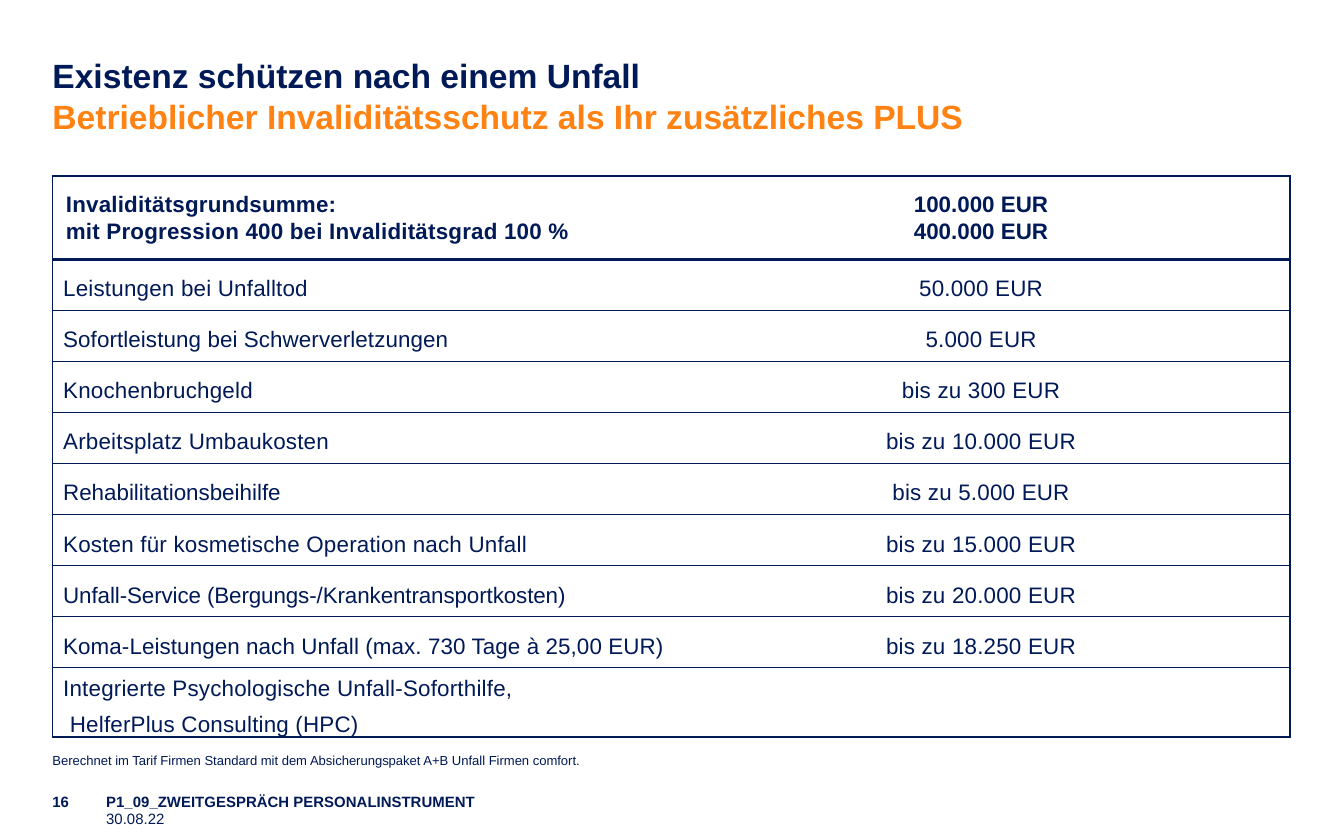
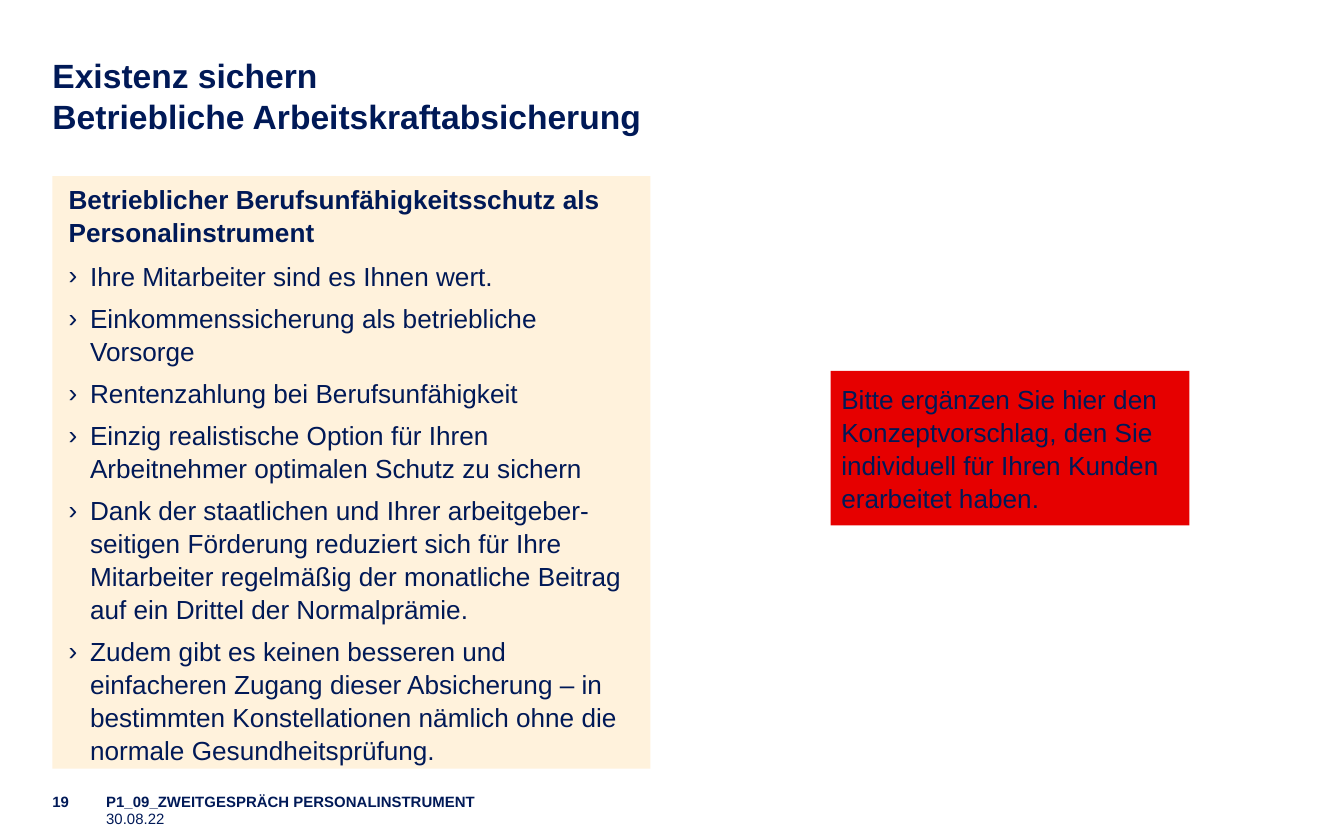
from lxml import etree
from pptx import Presentation
from pptx.dml.color import RGBColor
from pptx.enum.shapes import MSO_SHAPE
from pptx.enum.text import MSO_ANCHOR, MSO_AUTO_SIZE, PP_ALIGN
from pptx.oxml.ns import qn
from pptx.util import Pt

PX = 9144  # 100 px to the inch
RECT = MSO_SHAPE.RECTANGLE
TOP, MIDDLE = MSO_ANCHOR.TOP, MSO_ANCHOR.MIDDLE
FIXED = MSO_AUTO_SIZE.NONE
LEFT, CENTER = PP_ALIGN.LEFT, PP_ALIGN.CENTER
NAVY, ORANGE, CREAM, RED, WHITE = "001957", "FF8213", "FFF2DC", "E60000", "FFFFFF"
FONT = "Arial"
hue = RGBColor.from_string


def write(frame, text, size=12, bold=False, color=NAVY, align=LEFT, line=1.0,
          before=0, after=0, left=0, hang=0, bullet=None, level=0, track=0, wrap=False):
    """Add a paragraph, or with wrap a new line in the last paragraph."""
    para = frame.paragraphs[-1]
    if wrap:
        para.add_line_break()
    elif para.runs:
        para = frame.add_paragraph()
    props = para._p.get_or_add_pPr()
    props.set("marL", str(left * PX))
    props.set("indent", str(-hang * PX))
    if bullet and not wrap:
        tint = etree.SubElement(props, qn("a:buClr"))
        etree.SubElement(tint, qn("a:srgbClr"), val=color)
        etree.SubElement(props, qn("a:buFont"), typeface=FONT)
        etree.SubElement(props, qn("a:buChar"), char=bullet)
    elif not wrap:
        etree.SubElement(props, qn("a:buNone"))
    para.level, para.alignment, para.line_spacing = level, align, line
    para.space_before, para.space_after = Pt(before), Pt(after)
    run = para.add_run()
    run.text = text
    run.font.name, run.font.size, run.font.bold = FONT, Pt(size), bold
    run.font.color.rgb = hue(color)
    if track:
        run._r.get_or_add_rPr().set("spc", str(round(track * 100)))


def place(shape, x, y, w, h, inset=(0, 0, 0, 0), anchor=TOP):
    """Set bounds and text frame (insets: left, top, right, bottom)."""
    shape.left, shape.top, shape.width, shape.height = [n * PX for n in (x, y, w, h)]
    frame = shape.text_frame
    frame.word_wrap, frame.auto_size, frame.vertical_anchor = True, FIXED, anchor
    (frame.margin_left, frame.margin_top,
     frame.margin_right, frame.margin_bottom) = [n * PX for n in inset]
    return frame


deck = Presentation()
deck.slide_width, deck.slide_height = 1000 * PX, 625 * PX

# Titles and footers
heads = [
    (5, "16", [("Existenz schützen nach einem Unfall", NAVY),
               ("Betrieblicher Invaliditätsschutz als Ihr zusätzliches PLUS", ORANGE)]),
    (1, "19", [("Existenz sichern", NAVY),
               ("Betriebliche Arbeitskraftabsicherung", NAVY)]),
]
for layout, number, lines in heads:
    slide = deck.slides.add_slide(deck.slide_layouts[layout])
    frame = place(slide.shapes.title, 39, 41, 921, 59)
    for i, (text, color) in enumerate(lines):
        write(frame, text, size=18, bold=True, color=color, wrap=i > 0)
    for x, y, w, text, bold in [
        (79, 605, 461, "30.08.22", False),
        (79, 592, 461, "P1_09_ZWEITGESPRÄCH PERSONALINSTRUMENT", True),
        (39, 592, 39, number, True),
    ]:
        foot = slide.shapes.add_textbox(0, 0, PX, PX)
        frame = place(foot, x, y, w, 8, anchor=MIDDLE)
        write(frame, text, size=8, bold=bold, line=1.05)
first, second = deck.slides

# Benefits table
rows = [
    ("Leistungen bei Unfalltod", 0.1, "50.000 EUR"),
    ("Sofortleistung bei Schwerverletzungen", 0.05, "5.000 EUR"),
    ("Knochenbruchgeld", 0.1, "bis zu 300 EUR"),
    ("Arbeitsplatz Umbaukosten", 0.1, "bis zu 10.000 EUR"),
    ("Rehabilitationsbeihilfe", 0, "bis zu 5.000 EUR"),
    ("Kosten für kosmetische Operation nach Unfall", 0.1, "bis zu 15.000 EUR"),
    ("Unfall-Service (Bergungs-/Krankentransportkosten)", -0.05, "bis zu 20.000 EUR"),
    ("Koma-Leistungen nach Unfall (max. 730 Tage à 25,00 EUR)", 0.05, "bis zu 18.250 EUR"),
]
last = len(rows) + 1
table = first.shapes.add_table(last + 1, 2, 39 * PX, 131 * PX, 921 * PX, 403 * PX).table
table.first_row = table.horz_banding = False
table.columns[0].width, table.columns[1].width = 461 * PX, 460 * PX
for r in range(last + 1):
    table.rows[r].height = {0: 62, last: 37}.get(r, 38) * PX
    for c in range(2):
        cell = table.cell(r, c)
        cell.fill.solid()
        cell.fill.fore_color.rgb = hue(WHITE)
        cell.vertical_anchor = MIDDLE
        cell.margin_left = cell.margin_right = cell.margin_bottom = 0
        cell.margin_top = (6 if r else 3) * PX
        edges = {
            "lnL": 0 if c else 1,
            "lnR": 1 if c or r == last else 0,
            "lnT": 1.5 if r == 1 else 0.5 if r else 1,
            "lnB": {0: 1.5, last: 1}.get(r, 0.5),
        }
        props = cell._tc.get_or_add_tcPr()
        for i, (edge, width) in enumerate(edges.items()):
            rule = etree.Element(qn("a:" + edge), w=str(Pt(width)))
            if width:
                fill = etree.SubElement(rule, qn("a:solidFill"))
                etree.SubElement(fill, qn("a:srgbClr"), val=NAVY)
            else:
                etree.SubElement(rule, qn("a:noFill"))
            props.insert(i, rule)
table.cell(last, 0).merge(table.cell(last, 1))

label, value = table.cell(0, 0).text_frame, table.cell(0, 1).text_frame
tight = Pt(11.9)
write(label, "Invaliditätsgrundsumme:", bold=True, line=tight, left=10, track=0.1)
write(label, "mit Progression 400 bei Invaliditätsgrad 100 %", bold=True, line=tight,
      before=2.6, left=10, track=0.1)
write(value, "100.000 EUR", bold=True, align=CENTER, line=tight)
write(value, "400.000 EUR", bold=True, align=CENTER, before=0.8)
for r, (text, track, amount) in enumerate(rows, 1):
    write(table.cell(r, 0).text_frame, text, left=8, track=track)
    write(table.cell(r, 1).text_frame, amount, align=CENTER, track=0.1)
label = table.cell(last, 0).text_frame
write(label, "Integrierte Psychologische Unfall-Soforthilfe,", left=8, track=0.1)
write(label, "HelferPlus Consulting (HPC)", left=13, before=5.8, track=0.1)

note = first.shapes.add_textbox(0, 0, PX, PX)
frame = place(note, 39, 560, 911, 17, inset=(0, 0, 0, 5), anchor=MIDDLE)
write(frame, "Berechnet im Tarif Firmen Standard mit dem Absicherungspaket "
      "A+B Unfall Firmen comfort.", size=7)

# Arguments list
body = second.placeholders[1]
body.fill.solid()
body.fill.fore_color.rgb = hue(CREAM)
frame = place(body, 39, 131, 445, 441, inset=(12, 4, 8, 0))
write(frame, "Betrieblicher Berufsunfähigkeitsschutz als Personalinstrument",
      size=14, bold=True, line=1.05, after=6)
points = [
    (0, "Ihre Mitarbeiter sind es Ihnen wert."),
    (0, "Einkommenssicherung als betriebliche Vorsorge"),
    (0, "Rentenzahlung bei Berufsunfähigkeit"),
    (0, "Einzig realistische Option für Ihren Arbeitnehmer optimalen Schutz zu sichern"),
    (1, "Dank der staatlichen und Ihrer arbeitgeber-seitigen Förderung reduziert sich "
        "für Ihre Mitarbeiter regelmäßig der monatliche Beitrag auf ein Drittel der "
        "Normalprämie."),
    (1, "Zudem gibt es keinen besseren und einfacheren Zugang dieser Absicherung – in "
        "bestimmten Konstellationen nämlich ohne die normale Gesundheitsprüfung."),
]
for level, text in points:
    write(frame, text, size=14, line=1.05, after=5, left=16, hang=16,
          bullet="›", level=level)

# Prompt box
prompt = second.shapes.add_shape(RECT, 0, 0, PX, PX)
prompt.shadow.inherit = False
prompt.fill.solid()
prompt.fill.fore_color.rgb = hue(RED)
prompt.line.fill.background()
frame = place(prompt, 618, 276, 267, 115, inset=(8, 8, 8, 8))
write(frame, "Bitte ergänzen Sie hier den Konzeptvorschlag, den Sie individuell für "
      "Ihren Kunden erarbeitet haben.", size=14, line=1.05)

deck.save("out.pptx")
